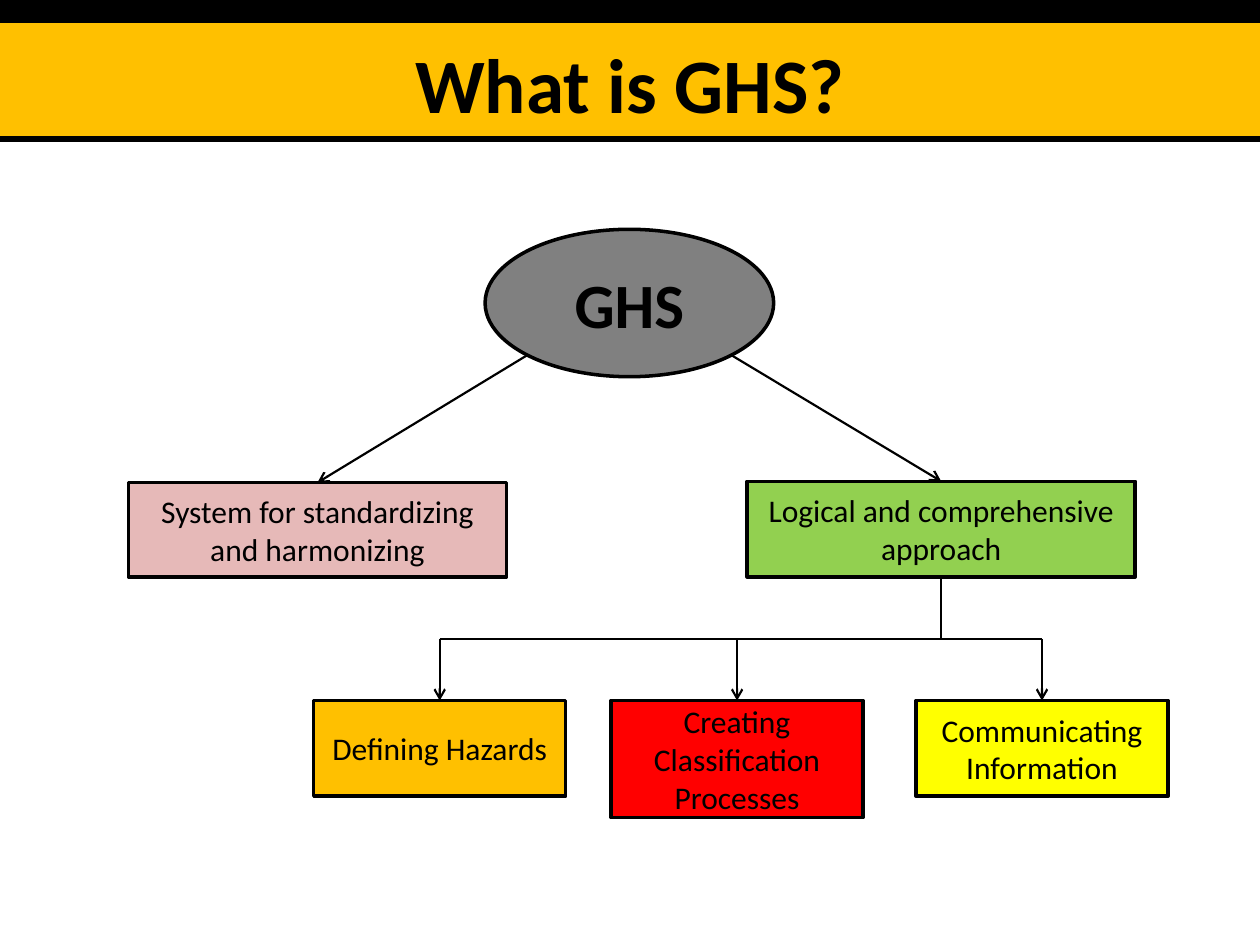
from lxml import etree
from pptx import Presentation
from pptx.dml.color import RGBColor
from pptx.enum.shapes import MSO_CONNECTOR, MSO_SHAPE
from pptx.enum.text import MSO_ANCHOR, PP_ALIGN
from pptx.oxml.ns import qn
from pptx.util import Inches, Pt

RECT, OVAL = MSO_SHAPE.RECTANGLE, MSO_SHAPE.OVAL
STRAIGHT = MSO_CONNECTOR.STRAIGHT
CENTER = PP_ALIGN.CENTER
TOP, MIDDLE = MSO_ANCHOR.TOP, MSO_ANCHOR.MIDDLE
TOP_SIDE, BOTTOM_SIDE = 0, 2

BLACK = RGBColor(0, 0, 0)
AMBER = RGBColor(0xFF, 0xC0, 0x00)
GRAY = RGBColor(0x80, 0x80, 0x80)
PINK = RGBColor(0xE6, 0xB9, 0xB8)
GREEN = RGBColor(0x92, 0xD0, 0x50)
RED = RGBColor(0xFF, 0, 0)
YELLOW = RGBColor(0xFF, 0xFF, 0)

# text, fill, (left, top, width, height) in inches
TITLE = "What is GHS?"
ROOT = ("GHS", GRAY, (3.85, 1.82, 2.29, 1.17))
STANDARDIZING = ("System for standardizing and harmonizing", PINK, (1.02, 3.83, 3, 0.75))
APPROACH = ("Logical and comprehensive approach", GREEN, (5.93, 3.82, 3.08, 0.76))
STEPS = [
    ("Defining Hazards", AMBER, (2.49, 5.56, 2, 0.76)),
    ("Creating Classification Processes", RED, (4.85, 5.56, 2, 0.93)),
    ("Communicating Information", YELLOW, (7.27, 5.56, 2, 0.76)),
]
BUS_Y = Inches(5.07)

prs = Presentation()
prs.slide_width, prs.slide_height = Inches(10), Inches(7.5)
slide = prs.slides.add_slide(prs.slide_layouts[5])
shapes = slide.shapes


def write(shape, text, size=18, bold=False, anchor=MIDDLE):
    frame = shape.text_frame
    frame.word_wrap = True
    frame.vertical_anchor = anchor
    paragraph = frame.paragraphs[0]
    paragraph.alignment = CENTER
    run = paragraph.add_run()
    run.text = text
    run.font.name = "Calibri"
    run.font.size = Pt(size)
    run.font.bold = bold
    run.font.color.rgb = BLACK


def add_block(kind, fill, box, line=BLACK):
    block = shapes.add_shape(kind, *map(Inches, box))
    block.shadow.inherit = False
    block.fill.solid()
    block.fill.fore_color.rgb = fill
    block.line.color.rgb = line
    block.line.width = Pt(2)
    return block


def add_node(node, kind=RECT, **text_format):
    text, fill, box = node
    block = add_block(kind, fill, box)
    write(block, text, **text_format)
    return block


def add_line(x1, y1, x2, y2, width=1.25, arrow=False):
    line = shapes.add_connector(STRAIGHT, x1, y1, x2, y2)
    line.line.color.rgb = BLACK
    line.line.width = Pt(width)
    properties = line.element.spPr
    if arrow:
        etree.SubElement(properties.find(qn("a:ln")), qn("a:tailEnd"), type="arrow")
    etree.SubElement(properties, qn("a:effectLst"))
    return line


def center_x(shape):
    return shape.left + shape.width // 2


# Header
add_block(RECT, AMBER, (0, 0, 10, 1.08), line=AMBER)
add_block(RECT, BLACK, (0, 0, 10, 0.17))
add_line(Inches(10), Inches(1.1), 0, Inches(1.1), width=3.5)
title = shapes.title
title.left, title.top, title.width, title.height = map(Inches, (0.5, 0.24, 9, 1.25))
write(title, TITLE, size=44, bold=True, anchor=TOP)
title.element.getparent().append(title.element)  # in front of the header bands

# Nodes
root = add_node(ROOT, OVAL, size=36, bold=True)
standardizing = add_node(STANDARDIZING)
approach = add_node(APPROACH)
steps = [add_node(step) for step in STEPS]

# Arrows leave the ellipse at its lower diagonal points
DIAGONAL = 0.5 ** 0.5
start_y = int(root.top + root.height / 2 * (1 + DIAGONAL))
for side, branch in ((-1, standardizing), (1, approach)):
    start_x = int(center_x(root) + side * root.width / 2 * DIAGONAL)
    arrow = add_line(start_x, start_y, center_x(branch), branch.top, arrow=True)
    arrow.end_connect(branch, TOP_SIDE)

# Branching from the approach to its steps
stem_x = center_x(approach)
stem = add_line(stem_x, approach.top + approach.height, stem_x, BUS_Y)
stem.begin_connect(approach, BOTTOM_SIDE)
add_line(center_x(steps[0]), BUS_Y, center_x(steps[-1]), BUS_Y)
for step in steps:
    drop = add_line(center_x(step), BUS_Y, center_x(step), step.top, arrow=True)
    drop.end_connect(step, TOP_SIDE)

prs.save("out.pptx")
